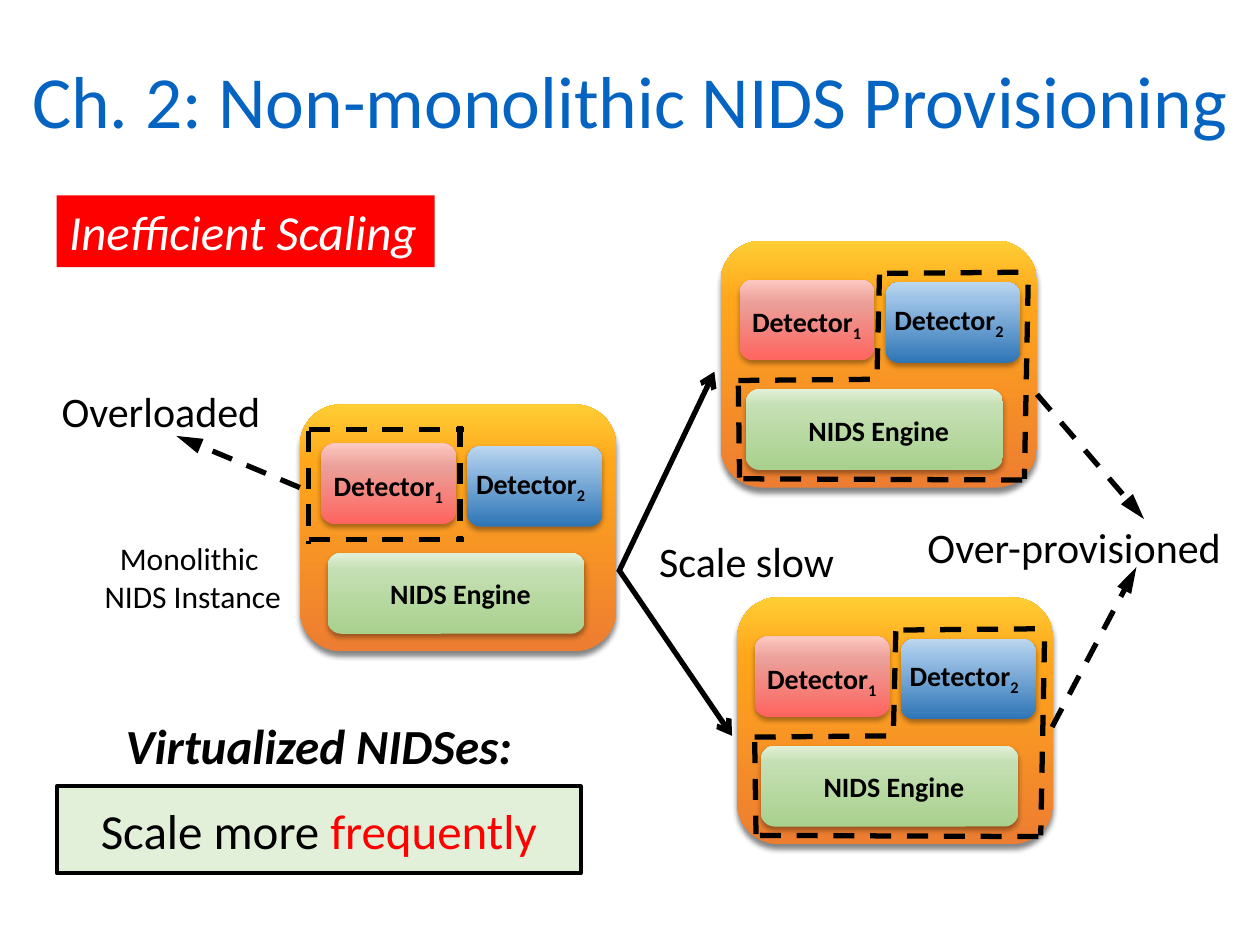
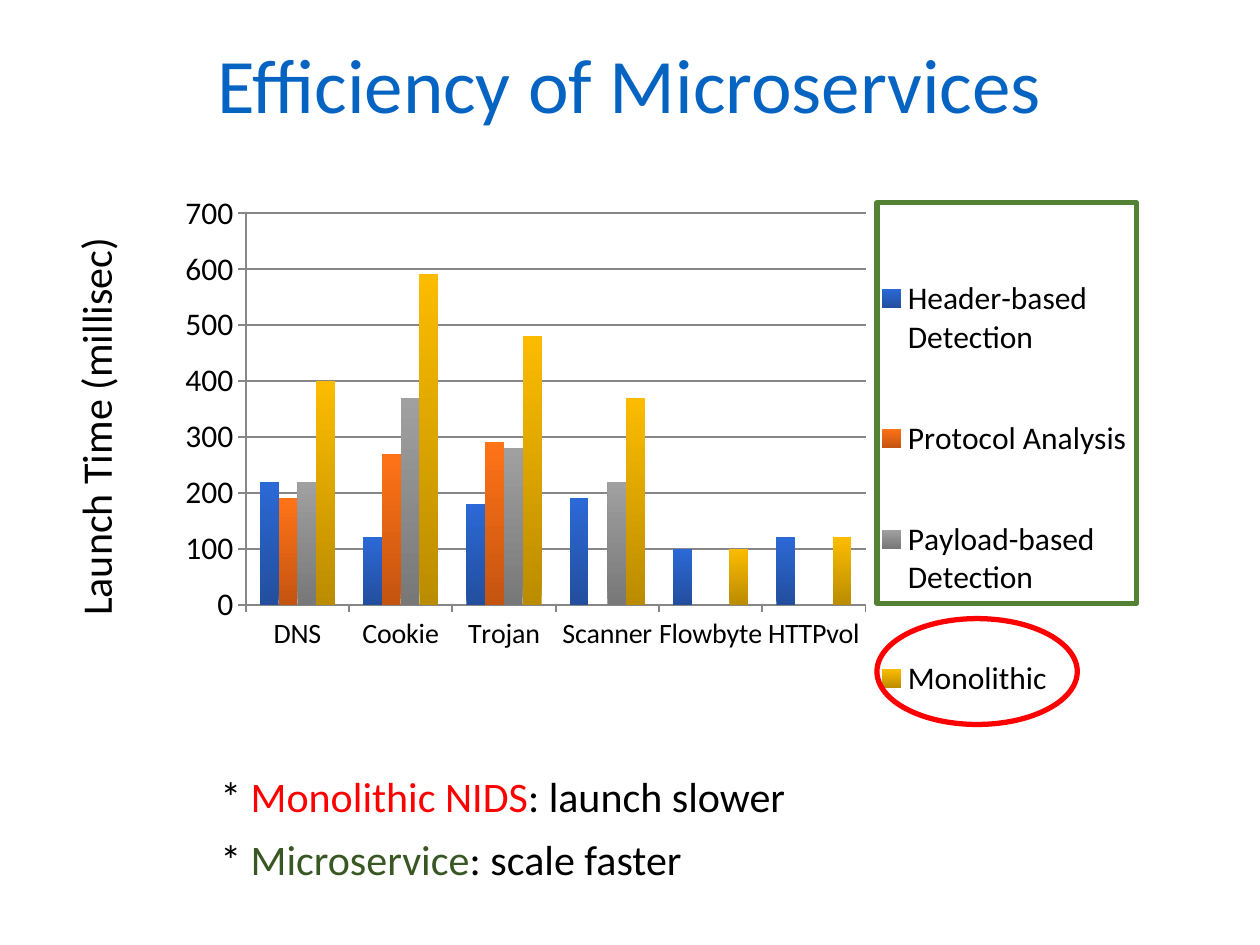
from lxml.etree import SubElement as Sub
from pptx import Presentation
from pptx.chart.data import CategoryChartData as Data
from pptx.dml.color import RGBColor as Rgb
from pptx.enum.chart import XL_CHART_TYPE as Kind, XL_LEGEND_POSITION as Side, XL_TICK_MARK as Tick
from pptx.enum.dml import MSO_LINE as Dash
from pptx.enum.shapes import MSO_CONNECTOR as Link, MSO_SHAPE as Form
from pptx.enum.text import MSO_ANCHOR as Anchor, PP_ALIGN as Align
from pptx.oxml.ns import qn
from pptx.util import Pt

SCALE = 9144
FONT = "Calibri"
BLACK, WHITE, RED, BLUE = "000000", "FFFFFF", "FF0000", "0563C1"
GREEN, MINT, PINE, GREY = "548235", "E2F0D9", "385723", "868686"

ORANGE = [(0, "ED7D31"), (76, "FFA61B"), (100, "FFCD34")]
PINK = [(1, "FF6560"), (71, "EB9F98"), (100, "FDC9C1")]
LEAF = [(2, "A9D18E"), (80, "C5E0B4"), (100, MINT)]
SKY = [(0, "2E75B6"), (80, "9DC3E6"), (100, "BDD7EE")]

BOLD = {"size": 16, "bold": True}
PARTS = [
    (PINK, (17, 31, 107, 64), (17, 46, 111, 37), "Detector", "1", False),
    (LEAF, (22, 118, 204, 64), (22, 132, 211, 37), "NIDS Engine", "", True),
    (SKY, (133, 33, 107, 64), (130, 44, 111, 37), "Detector", "2", False),
]
HOT = [
    (7, 107, 130, 107), (127, 17, 127, 107),
    (7, 20, 130, 20), (7, 21, 7, 111),
]
SPARE = [
    (14, 111, 124, 110), (126, 27, 124, 109), (244, 35, 241, 189),
    (132, 26, 244, 25), (18, 189, 243, 190), (14, 115, 15, 188),
]
NODES = [(238, 321, 0, HOT), (585, 474, -3, SPARE), (572, 191, -2, SPARE)]
ARROWS = [
    (238, 387, 140, 346, True), (823, 313, 908, 412, True),
    (835, 577, 902, 450, True), (491, 454, 567, 295, False),
    (491, 452, 581, 584, False),
]
LABELS = [
    ((39, 301, 180, 50), [[("Overloaded", {})]], False),
    ((72, 423, 162, 71), [[("Monolithic ", {"size": 18})],
                          [("NIDS Instance", {"size": 18})]], True),
    ((510, 420, 165, 50), [[("Scale slow", {})]], True),
    ((707, 409, 291, 50), [[("Over-provisioned", {})]], True),
    ((45, 563, 416, 57), [[("Virtualized NIDSes:",
                            {"size": 28, "bold": True, "italic": True})]], True),
]
NOTES = [
    ("Monolithic NIDS", RED, ": launch slower"),
    ("Microservice", PINE, ": scale faster"),
]
CHART = (117, 145, 829, 460)
PLOT = (78, 24, 492, 311)
LEGEND = (572, 27, 216, 432)
CATS = ["DNS", "Cookie", "Trojan", "Scanner", "Flowbyte", "HTTPvol"]
SERIES = [
    ("Header-based Detection", [220, 120, 180, 190, 100, 120], "234E9E", "2B69D6"),
    ("Protocol Analysis", [190, 270, 290, 0, 0, 0], "C45410", "FF7317"),
    ("Payload-based Detection", [220, 370, 280, 220, 0, 0], "787878", "A0A0A0"),
    ("Monolithic", [400, 590, 480, 370, 100, 120], "BB8C00", "FBBC00"),
]


def px(*vals):
    return [v * SCALE for v in vals]


def put(obj, vals):
    for key, val in vals.items():
        setattr(obj, key, val)


def tint(text):
    return Rgb.from_string(text)


def style(font, size=24, color=BLACK, **more):
    put(font, {"name": FONT, "size": Pt(size), **more})
    font.color.rgb = tint(color)


def solid(fill, color):
    fill.solid()
    fill.fore_color.rgb = tint(color)


def stroke(line, color, width):
    line.color.rgb = tint(color)
    line.width = Pt(width)


def shade(fill, node, stops):
    fill.gradient()
    fill.gradient_angle = 90
    bag = node.find(".//" + qn("a:gsLst"))
    for old in list(bag):
        bag.remove(old)
    for pos, color in stops:
        stop = Sub(bag, qn("a:gs"), pos=str(pos * 1000))
        Sub(stop, qn("a:srgbClr"), val=color)


def write(shape, paras, mid=False, anchor=Anchor.TOP):
    frame = shape.text_frame
    pad = 0 if mid else 10
    put(frame, {"word_wrap": True, "vertical_anchor": anchor,
                "margin_left": px(pad)[0], "margin_right": 0})
    for i, runs in enumerate(paras):
        para = frame.add_paragraph() if i else frame.paragraphs[0]
        para.alignment = Align.CENTER if mid else Align.LEFT
        for text, form in runs:
            form = dict(form)
            base = form.pop("base", None)
            run = para.add_run()
            run.text = text
            style(run.font, **form)
            if base:
                run.font._element.set("baseline", str(base))


def label(slide, at, paras, mid=False, anchor=Anchor.TOP):
    box = slide.shapes.add_textbox(*px(*at))
    write(box, paras, mid, anchor)
    return box


def title(slide, text, at, size):
    label(slide, at, [[(text, {"size": size, "color": BLUE})]], True, Anchor.MIDDLE)


def shape(slide, form, at, fill=None, line=None, width=3):
    item = slide.shapes.add_shape(form, *px(*at))
    item.shadow.inherit = False
    if fill:
        solid(item.fill, fill)
    else:
        item.fill.background()
    if line:
        stroke(item.line, line, width)
    else:
        item.line.fill.background()
    return item


def card(slide, at, stops, alpha, dist):
    item = shape(slide, Form.ROUNDED_RECTANGLE, at)
    node = item._element.spPr
    shade(item.fill, node, stops)
    glow = Sub(node.find(qn("a:effectLst")), qn("a:outerShdw"),
               blurRad=str(Pt(3.1)), dist=str(Pt(dist)), dir="5400000", rotWithShape="0")
    color = Sub(glow, qn("a:srgbClr"), val=BLACK)
    Sub(color, qn("a:alpha"), val=str(alpha * 1000))


def rule(slide, ends, dash=True, head=None):
    item = slide.shapes.add_connector(Link.STRAIGHT, *px(*ends))
    stroke(item.line, BLACK, 3)
    if dash:
        item.line.dash_style = Dash.DASH
    if head:
        size = "lg" if head == "triangle" else "med"
        Sub(item.line._get_or_add_ln(), qn("a:tailEnd"), type=head, w="med", len=size)
    Sub(item._element.spPr, qn("a:effectLst"))


def node(slide, x, y, nudge, dashes):
    card(slide, (x, y, 251, 196), ORANGE, 48, 3)
    for stops, area, spot, text, sub, mid in PARTS:
        (l, t, w, h), (a, b, c, d) = area, spot
        card(slide, (x + l + nudge, y + t, w, h), stops, 35, 1.8)
        runs = [(text, BOLD)]
        if sub:
            runs.append((sub, {**BOLD, "base": -25000}))
        label(slide, (x + a + nudge, y + b, c, d), [runs], mid)
    for a, b, c, d in dashes:
        rule(slide, (x + a, y + b, x + c, y + d))


def scaling(slide):
    title(slide, "Ch. 2: Non-monolithic NIDS Provisioning", (0, 30, 1000, 97), 42)
    for spec in NODES:
        node(slide, *spec)
    for *ends, dash in ARROWS:
        rule(slide, ends, dash, "triangle" if dash else "arrow")
    for spec in LABELS:
        label(slide, *spec)
    tag = shape(slide, Form.RECTANGLE, (45, 155, 300, 57), RED)
    write(tag, [[("Inefficient Scaling", {"size": 28, "color": WHITE, "italic": True})]])
    claim = shape(slide, Form.RECTANGLE, (45, 624, 416, 69), MINT, BLACK, 2.25)
    write(claim, [[("Scale more ", {"size": 28}),
                   ("frequently", {"size": 28, "color": RED})]], True, Anchor.MIDDLE)


def layout(area, place, inner=False):
    old = area.find(qn("c:layout"))
    if old is not None:
        area.remove(old)
    node = Sub(area, qn("c:layout"))
    area.remove(node)
    area.insert(0 if inner else 1, node)
    man = Sub(node, qn("c:manualLayout"))
    if inner:
        Sub(man, qn("c:layoutTarget"), val="inner")
    for key in ("xMode", "yMode"):
        Sub(man, qn("c:" + key), val="edge")
    for key, val, full in zip("xywh", place, CHART[2:] * 2):
        Sub(man, qn("c:" + key), val=str(val / full))


def graph(slide):
    data = Data()
    data.categories = CATS
    for name, vals, *_ in SERIES:
        data.add_series(name, vals)
    chart = slide.shapes.add_chart(Kind.COLUMN_CLUSTERED, *px(*CHART), data).chart
    put(chart, {"has_title": False, "has_legend": True})
    style(chart.font, 18)
    put(chart.legend, {"position": Side.RIGHT, "include_in_layout": False})
    style(chart.legend.font, 18)
    put(chart.plots[0], {"gap_width": 150, "vary_by_categories": False})
    for bars, (*_, low, high) in zip(chart.plots[0].series, SERIES):
        bars.invert_if_negative = False
        shade(bars.format.fill, bars._element, [(0, low), (100, high)])
    put(chart.value_axis, {"minimum_scale": 0, "maximum_scale": 700,
                           "major_unit": 100, "has_major_gridlines": True})
    stroke(chart.value_axis.major_gridlines.format.line, GREY, 1)
    for axis, size in ((chart.category_axis, 16), (chart.value_axis, 18)):
        put(axis, {"major_tick_mark": Tick.OUTSIDE, "minor_tick_mark": Tick.NONE})
        style(axis.tick_labels.font, size)
        stroke(axis.format.line, GREY, 1)
    layout(chart._chartSpace.chart.plotArea, PLOT, True)
    layout(chart.legend._element, LEGEND)


def speed(slide):
    graph(slide)
    title(slide, "Efficiency of Microservices", (50, 30, 900, 72), 44)
    axis = label(slide, (-86, 312, 323, 50), [[("Launch Time (millisec)", {})]])
    axis.rotation = 270
    for i, (word, color, rest) in enumerate(NOTES):
        runs = [("* ", {}), (word, {"color": color}), (rest, {})]
        label(slide, (165, 607 + 50 * i, 650, 50), [runs])
    shape(slide, Form.OVAL, (696, 491, 159, 84), line=RED)
    shape(slide, Form.RECTANGLE, (696, 161, 206, 318), line=GREEN)


def main():
    deck = Presentation()
    wide, high = px(1000, 750)
    put(deck, {"slide_width": wide, "slide_height": high})
    for build in (scaling, speed):
        build(deck.slides.add_slide(deck.slide_layouts[6]))
    deck.save("out.pptx")


if __name__ == "__main__":
    main()
